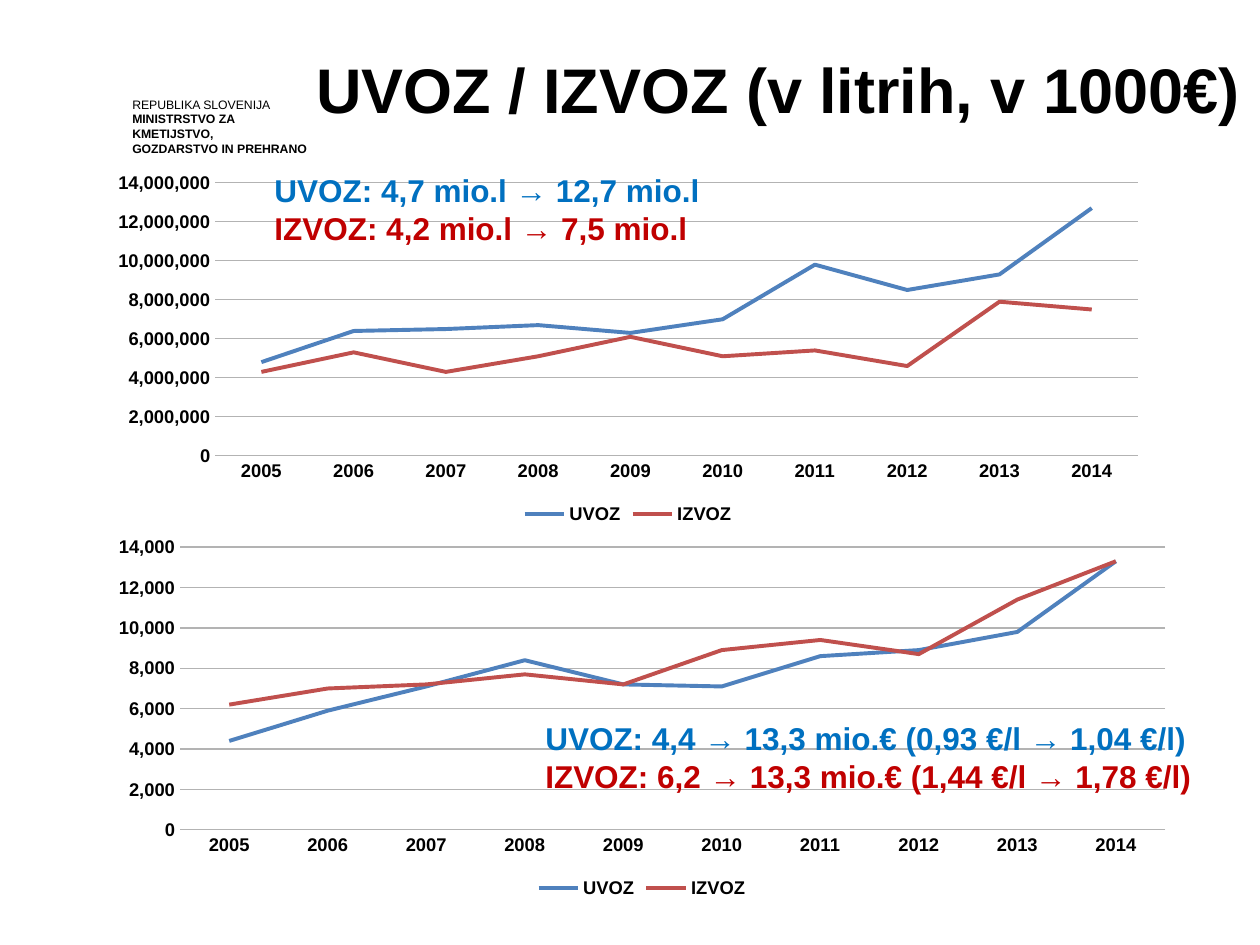
from pptx import Presentation
from pptx.chart.data import CategoryChartData
from pptx.dml.color import RGBColor
from pptx.enum.chart import XL_CHART_TYPE, XL_LEGEND_POSITION, XL_TICK_MARK
from pptx.enum.text import MSO_ANCHOR
from pptx.util import Inches, Pt

# Content
FONT = "Arial"
COLORS = {
    "text": "000000", "grid": "B3B3B3",
    "import_line": "4F81BD", "export_line": "C0504D",
    "import_text": "0070C0", "export_text": "C00000",
}
TITLE = "UVOZ / IZVOZ (v litrih, v 1000€)"
MINISTRY = ["REPUBLIKA SLOVENIJA", "MINISTRSTVO ZA KMETIJSTVO,", "GOZDARSTVO IN PREHRANO"]
YEARS = [str(year) for year in range(2005, 2015)]
SERIES = [("UVOZ", "import_line"), ("IZVOZ", "export_line")]

# Values are in thousands of euros, and in units of 100,000 litres
VALUE_CHART = [
    [4400, 5900, 7100, 8400, 7200, 7100, 8600, 8900, 9800, 13300],
    [6200, 7000, 7200, 7700, 7200, 8900, 9400, 8700, 11400, 13300],
]
LITRE_UNIT = 100_000
LITRE_CHART = [
    [48, 64, 65, 67, 63, 70, 98, 85, 93, 127],
    [43, 53, 43, 51, 61, 51, 54, 46, 79, 75],
]
LITRE_NOTE = ["UVOZ: 4,7 mio.l → 12,7 mio.l", "IZVOZ: 4,2 mio.l → 7,5 mio.l"]
VALUE_NOTE = [
    "UVOZ: 4,4 → 13,3 mio.€ (0,93 €/l → 1,04 €/l)",
    "IZVOZ: 6,2 → 13,3 mio.€ (1,44 €/l → 1,78 €/l)",
]

# Layout in inches: the charts share a left edge and meet at one height
CHART_LEFT, LITRE_TOP, VALUE_TOP, VALUE_BOTTOM = 0.77, 1.31, 4.2, 7.17

presentation = Presentation()
presentation.slide_width, presentation.slide_height = Inches(10), Inches(7.5)
slide = presentation.slides.add_slide(presentation.slide_layouts[6])


def color(name):
    return RGBColor.from_string(COLORS[name])


def style_font(font, size, color_name="text", bold=True):
    font.name, font.size, font.bold = FONT, Pt(size), bold
    font.color.rgb = color(color_name)


def add_text(box, lines, size, wrap=False, inset=True, spacing=None):
    """Each line is (text, color name, bold)."""
    frame = slide.shapes.add_textbox(*map(Inches, box)).text_frame
    frame.word_wrap = wrap
    if not inset:
        frame.margin_left = frame.margin_top = frame.margin_right = frame.margin_bottom = 0
    for index, (text, color_name, bold) in enumerate(lines):
        paragraph = frame.add_paragraph() if index else frame.paragraphs[0]
        paragraph.text = text
        style_font(paragraph.font, size, color_name, bold)
        if spacing:
            paragraph.line_spacing = Pt(spacing)
    return frame


def add_note(box, lines):
    names = ["import_text", "export_text"]
    add_text(box, [(text, name, True) for text, name in zip(lines, names)], 18)


def add_line_chart(top, bottom, width, rows, major_unit):
    data = CategoryChartData(number_format="#,##0")
    data.categories = YEARS
    for (name, _), values in zip(SERIES, rows):
        data.add_series(name, values)
    box = map(Inches, (CHART_LEFT, top, width, bottom - top))
    chart = slide.shapes.add_chart(XL_CHART_TYPE.LINE, *box, data).chart
    style_font(chart.font, 10.5)
    chart.has_title = False
    chart.has_legend = True
    chart.legend.position = XL_LEGEND_POSITION.BOTTOM
    chart.legend.include_in_layout = False
    chart.plots[0].vary_by_categories = False

    # Axes
    for axis in (chart.category_axis, chart.value_axis):
        axis.major_tick_mark = axis.minor_tick_mark = XL_TICK_MARK.NONE
    value_axis = chart.value_axis
    value_axis.minimum_scale, value_axis.maximum_scale = 0, 7 * major_unit
    value_axis.major_unit = major_unit
    value_axis.tick_labels.number_format = "#,##0"
    value_axis.tick_labels.number_format_is_linked = False
    value_axis.format.line.fill.background()
    for line in (chart.category_axis.format.line, value_axis.major_gridlines.format.line):
        line.color.rgb = color("grid")
        line.width = Pt(0.75)

    # Series
    for series, (_, color_name) in zip(chart.plots[0].series, SERIES):
        series.smooth = False
        series.format.line.color.rgb = color(color_name)
        series.format.line.width = Pt(2.25)


# Ministry name
add_text((1.05, 0.77, 1.47, 0.34),
         [(text, "text", index > 0) for index, text in enumerate(MINISTRY)],
         7, wrap=True, inset=False, spacing=8.4)

# Value chart, title, litre chart
add_line_chart(VALUE_TOP, VALUE_BOTTOM, 8.65, VALUE_CHART, 2000)
title_frame = add_text((2.51, 0.39, 7.4, 0.61), [(TITLE, "text", True)], 36, inset=False)
title_frame.vertical_anchor = MSO_ANCHOR.BOTTOM
litres = [[value * LITRE_UNIT for value in row] for row in LITRE_CHART]
add_line_chart(LITRE_TOP, VALUE_TOP, 8.43, litres, 2_000_000)

# Notes over the charts
add_note((2.08, LITRE_TOP, 3.73, 0.71), LITRE_NOTE)
add_note((4.23, 5.66, 5.37, 0.71), VALUE_NOTE)

presentation.save("out.pptx")
